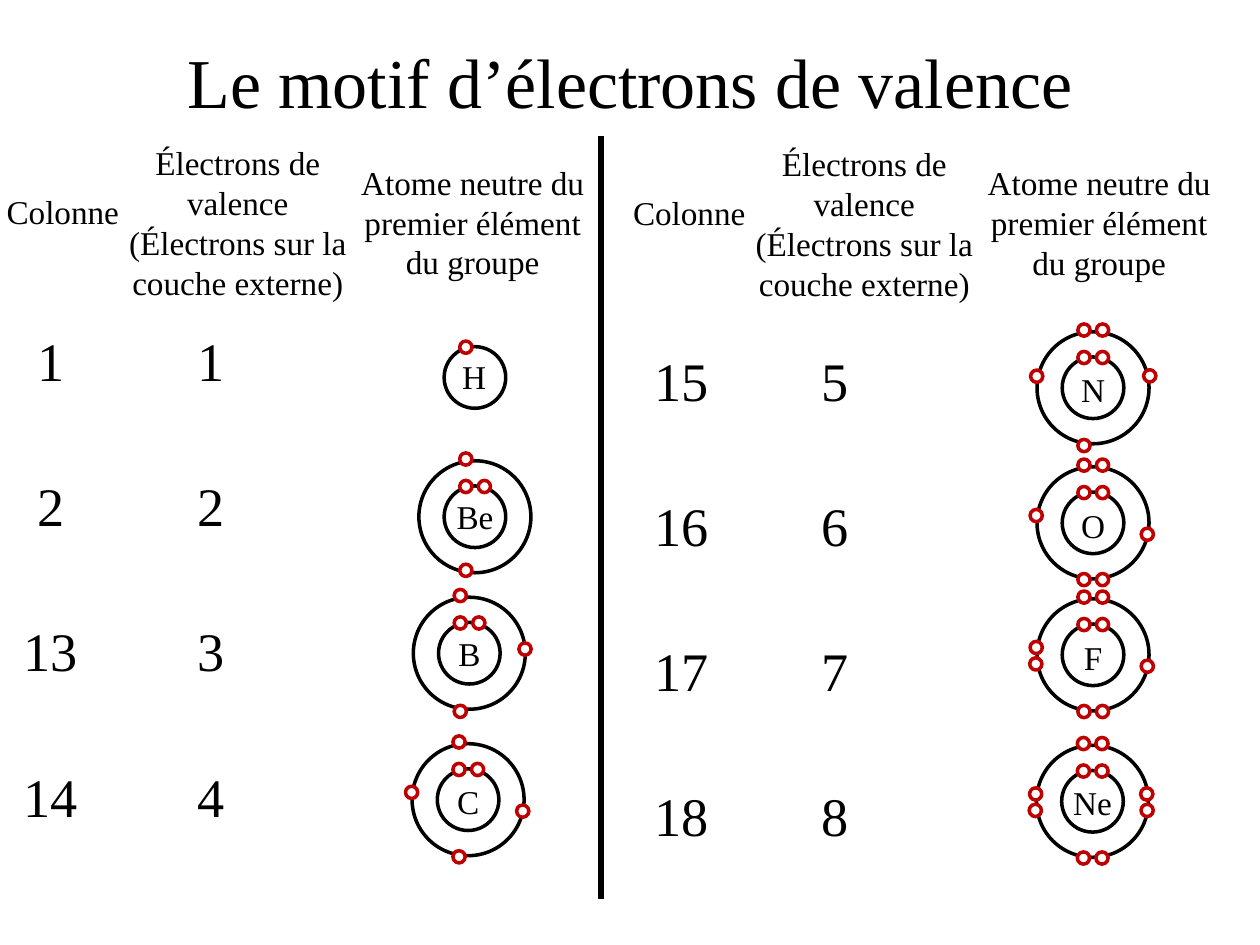
"""Build the slide on the valence electron pattern."""
from lxml.etree import SubElement
from pptx import Presentation
from pptx.dml.color import RGBColor
from pptx.enum.shapes import MSO_CONNECTOR, MSO_SHAPE
from pptx.enum.text import MSO_ANCHOR, MSO_AUTO_SIZE, PP_ALIGN
from pptx.oxml.ns import qn
from pptx.util import Pt

BLACK = RGBColor(0, 0, 0)
WHITE = RGBColor(255, 255, 255)
RED = RGBColor(192, 0, 0)
FONT = "Times New Roman"
INNER_DIAMETER, OUTER_DIAMETER, ELECTRON_DIAMETER = 35.2, 64, 7
PAIR_OFFSETS = (-5.2, 5.4)
INNER_ELECTRON_Y, OUTER_ELECTRON_Y = -17.3, -33
ROW_STEP = 82.9

presentation = Presentation()
presentation.slide_width = Pt(720)
presentation.slide_height = Pt(540)
slide = presentation.slides.add_slide(presentation.slide_layouts[5])


def add_text(lines, left, top, width, height, size, wrap=False):
    text_box = slide.shapes.add_textbox(Pt(left), Pt(top), Pt(width), Pt(height))
    frame = text_box.text_frame
    frame.word_wrap = wrap
    frame.text = lines
    for paragraph in frame.paragraphs:
        paragraph.alignment = PP_ALIGN.CENTER
        paragraph.font.size = Pt(size)
        paragraph.font.name = FONT
        paragraph.font.color.rgb = BLACK


def add_circle(center_x, center_y, diameter, line_color, fill_color=None):
    shape = slide.shapes.add_shape(
        MSO_SHAPE.OVAL, Pt(center_x - diameter / 2), Pt(center_y - diameter / 2),
        Pt(diameter), Pt(diameter))
    shape.shadow.inherit = False
    shape.line.color.rgb = line_color
    shape.line.width = Pt(2)
    if fill_color is None:
        shape.fill.background()
    else:
        shape.fill.solid()
        shape.fill.fore_color.rgb = fill_color


title = slide.shapes.title
title.left, title.top, title.width, title.height = Pt(36), Pt(21.6), Pt(648), Pt(49)
title.text_frame.text = "Le motif d’électrons de valence"
title.text_frame.auto_size = MSO_AUTO_SIZE.NONE
title.text_frame.vertical_anchor = MSO_ANCHOR.MIDDLE
title_paragraph = title.text_frame.paragraphs[0]
title_paragraph.alignment = PP_ALIGN.CENTER
title_paragraph.font.size = Pt(40)
title_paragraph.font.name = FONT
title_paragraph.font.color.rgb = BLACK

divider = slide.shapes.add_connector(
    MSO_CONNECTOR.STRAIGHT, Pt(343.5), Pt(77.8), Pt(343.5), Pt(514))
divider.line.color.rgb = BLACK
divider.line.width = Pt(3)
SubElement(divider._element.spPr, qn("a:effectLst"))

for x, y in ((0, 0), (358, 0.5)):
    add_text("Colonne", x - 3.6, y + 106, 79, 30.2, 19)
    add_text("Électrons de valence\n(Électrons sur la couche externe)",
             x + 54.4, y + 77.8, 163, 98.6, 19, wrap=True)
    add_text("Atome neutre du premier élément du groupe",
             x + 196.3, y + 89, 147.6, 76.3, 19, wrap=True)

number_columns = [
    (29, 183.6, (1, 2, 13, 14)),
    (120.5, 183.6, (1, 2, 3, 4)),
    (389.5, 195, (15, 16, 17, 18)),
    (477, 195, (5, 6, 7, 8)),
]
for center_x, top, numbers in number_columns:
    for row, number in enumerate(numbers):
        width = 30.2 if number < 10 else 46
        add_text(str(number), center_x - width / 2, top + row * ROW_STEP,
                 width, 44.6, 31)

hydrogen_x, hydrogen_y = 271.4, 215.7
add_circle(hydrogen_x, hydrogen_y, INNER_DIAMETER, BLACK)
add_circle(hydrogen_x + PAIR_OFFSETS[0], hydrogen_y + INNER_ELECTRON_Y,
           ELECTRON_DIAMETER, RED, WHITE)
add_text("H", hydrogen_x - 14.4, hydrogen_y - 15.9, 28, 30.2, 19)

atoms = [
    ("Be", 271.4, 295.3, 0, 1, 1, 30.6, []),
    ("B", 268.2, 373.3, 0, 1, 1, 33.2, [(31.8, -2.4)]),
    ("C", 267.5, 457, 1, 1, 1, 32.6, [(-32.3, -4.2), (31.2, 6.5)]),
    ("N", 624.6, 221.6, 0.7, 2, 1, 33, [(-32.2, -6.6), (32.4, -6.8)]),
    ("O", 624.6, 298.8, 1.4, 2, 2, 32.4, [(-32.5, -4.2), (31, 6.5)]),
    ("F", 624.6, 374.2, 1.5, 2, 2, 32.4, [(-32.5, -4.2), (-32.7, 5.2), (31, 6.5)]),
    ("Ne", 624.3, 457.9, 0.7, 2, 2, 32.4,
     [(-32.5, -4.2), (-32.7, 5.2), (31, -4.2), (31.2, 5.2)]),
]
for symbol, x, y, label_shift, top_count, bottom_count, bottom_y, side_electrons in atoms:
    add_circle(x, y, INNER_DIAMETER, BLACK)
    add_circle(x, y, OUTER_DIAMETER, BLACK)
    electrons = [(offset, INNER_ELECTRON_Y) for offset in PAIR_OFFSETS]
    electrons += [(offset, OUTER_ELECTRON_Y) for offset in PAIR_OFFSETS[:top_count]]
    electrons += [(offset, bottom_y) for offset in PAIR_OFFSETS[:bottom_count]]
    for offset_x, offset_y in electrons + side_electrons:
        add_circle(x + offset_x, y + offset_y, ELECTRON_DIAMETER, RED, WHITE)
    label_width = 18 + 10 * len(symbol)
    add_text(symbol, x - label_width / 2, y - 15.1 + label_shift, label_width, 30.2, 19)

presentation.save("out.pptx")
